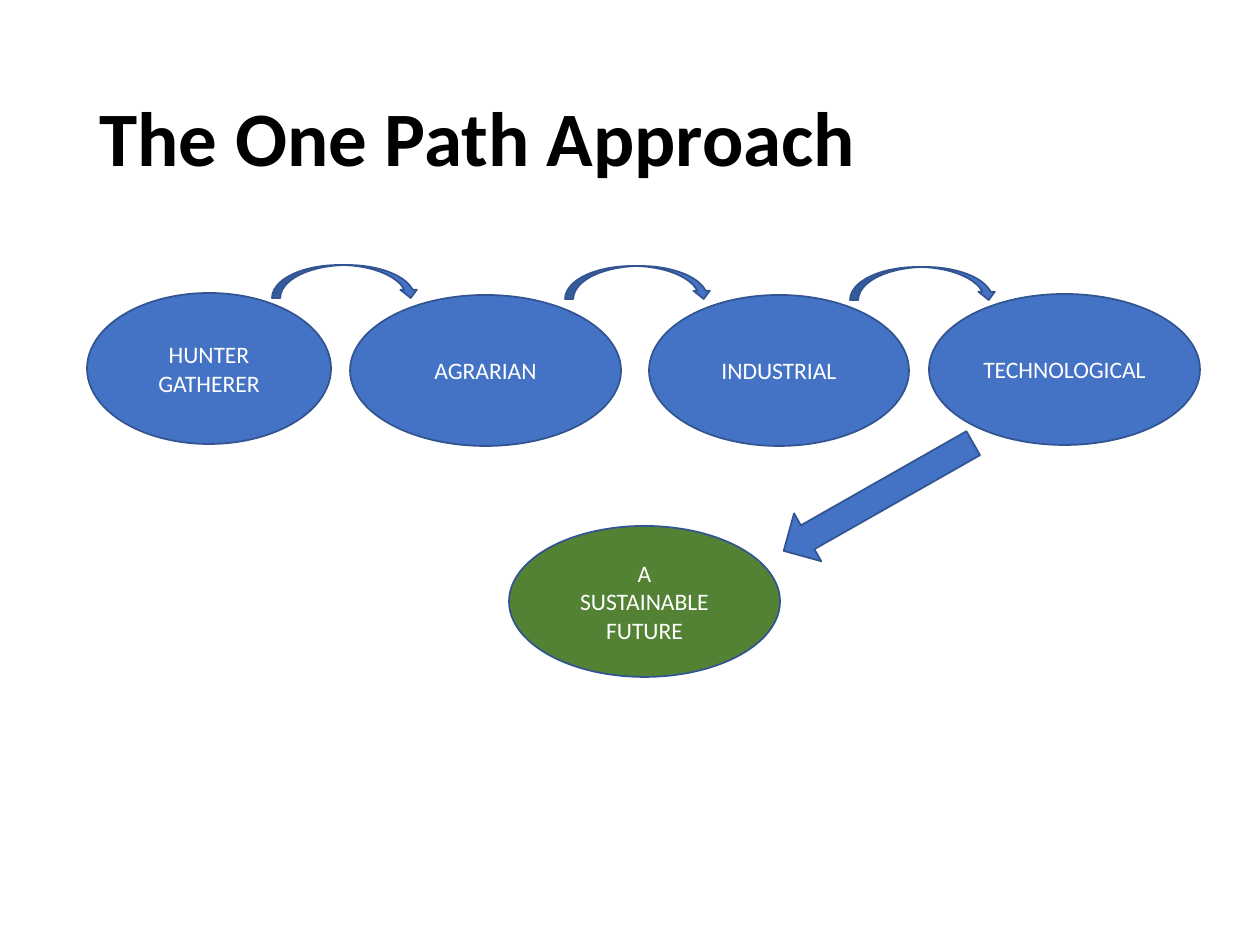
from dataclasses import dataclass

from pptx import Presentation
from pptx.dml.color import RGBColor
from pptx.enum import shapes, text
from pptx.util import Emu, Pt

PX_PER_INCH = 126
FONT = "Calibri"
BLUE, GREEN, OUTLINE = "4472C4", "548235", "325491"
WHITE, BLACK = "FFFFFF", "000000"
STAGE_HEIGHT = 151
HOP_SIZE = (147, 33)


@dataclass(frozen=True)
class Stage:
    lines: tuple[str, ...]
    left: int
    top: int
    width: int = 271
    fill: str = BLUE


@dataclass(frozen=True)
class Arrow:
    kind: shapes.MSO_SHAPE
    left: int
    top: int
    width: int
    height: int
    rotation: float = 0


STAGES = (
    Stage(("HUNTER", "GATHERER"), 87, 293, 244),
    Stage(("AGRARIAN",), 350, 295),
    Stage(("INDUSTRIAL",), 649, 295, 260),
    Stage(("TECHNOLOGICAL",), 929, 294),
)
HOPS = tuple(
    Arrow(shapes.MSO_SHAPE.CURVED_DOWN_ARROW, left, top, *HOP_SIZE)
    for left, top in ((272, 265), (565, 266), (850, 267))
)
FINAL_ARROW = Arrow(shapes.MSO_SHAPE.DOWN_ARROW, 851, 388, 55, 218, 60.4)
FUTURE = Stage(("A", "SUSTAINABLE", "FUTURE"), 509, 526, fill=GREEN)


def px(length: int) -> Emu:
    """Turn whole pixels into EMU."""
    return Emu(round(length * 914400 / PX_PER_INCH))


def colour(value: str) -> RGBColor:
    """Turn a hex string into a colour."""
    return RGBColor.from_string(value)


def add_span(para, words: str, size: float, ink: str, bold: bool = False) -> None:
    """Add one formatted run to a paragraph."""
    span = para.add_run()
    span.text = words
    span.font.name = FONT
    span.font.size = Pt(size)
    span.font.bold = bold
    span.font.color.rgb = colour(ink)


def add_box(page, kind, left: int, top: int, width: int, height: int, fill: str):
    """Add a filled and outlined preset shape."""
    box = page.shapes.add_shape(kind, px(left), px(top), px(width), px(height))
    box.shadow.inherit = False
    box.fill.solid()
    box.fill.fore_color.rgb = colour(fill)
    box.line.color.rgb = colour(OUTLINE)
    box.line.width = Pt(1)
    return box


def draw_title(page, words: str) -> None:
    """Place and fill the title placeholder."""
    title = page.shapes.title
    title.left, title.top, title.width, title.height = map(px, (87, 50, 1086, 183))
    title.text_frame.vertical_anchor = text.MSO_ANCHOR.MIDDLE
    para = title.text_frame.paragraphs[0]
    para.alignment = text.PP_ALIGN.LEFT
    para.line_spacing = 0.9
    add_span(para, words, 44, BLACK, bold=True)


def draw_stage(page, stage: Stage) -> None:
    """Draw a labelled ellipse."""
    box = add_box(page, shapes.MSO_SHAPE.OVAL, stage.left, stage.top,
                  stage.width, STAGE_HEIGHT, stage.fill)
    frame = box.text_frame
    frame.word_wrap = True
    frame.vertical_anchor = text.MSO_ANCHOR.MIDDLE
    for index, line in enumerate(stage.lines):
        para = frame.add_paragraph() if index else frame.paragraphs[0]
        para.alignment = text.PP_ALIGN.CENTER
        add_span(para, line, 13.5, WHITE)


def draw_arrow(page, arrow: Arrow) -> None:
    """Draw a block arrow."""
    box = add_box(page, arrow.kind, arrow.left, arrow.top,
                  arrow.width, arrow.height, BLUE)
    box.rotation = arrow.rotation


def main() -> None:
    """Build and save the slide."""
    deck = Presentation()
    deck.slide_width, deck.slide_height = px(1260), px(945)
    page = deck.slides.add_slide(deck.slide_layouts.get_by_name("Title Only"))
    draw_title(page, "The One Path Approach")
    for stage in STAGES:
        draw_stage(page, stage)
    for arrow in (*HOPS, FINAL_ARROW):
        draw_arrow(page, arrow)
    draw_stage(page, FUTURE)
    deck.save("out.pptx")


if __name__ == "__main__":
    main()
